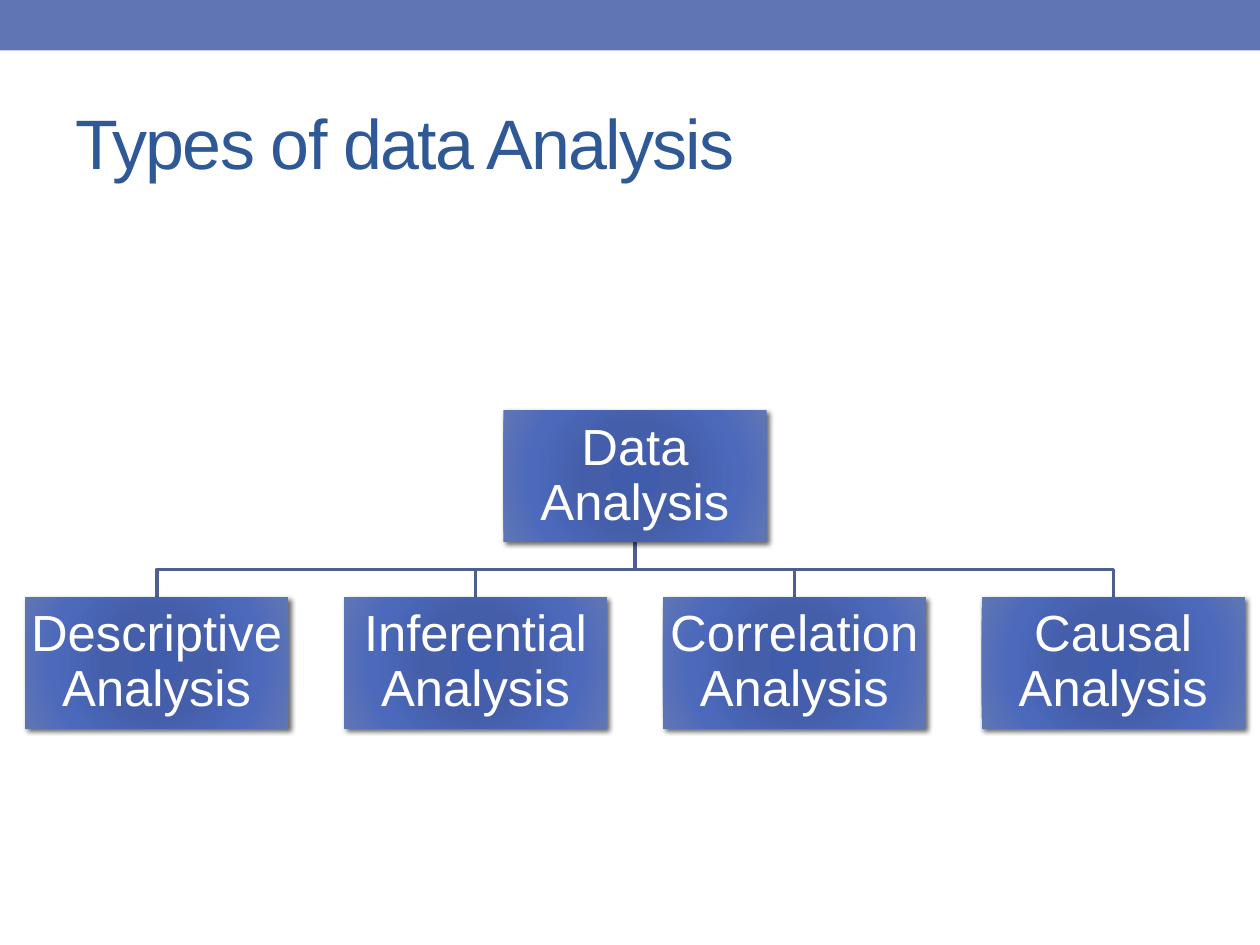
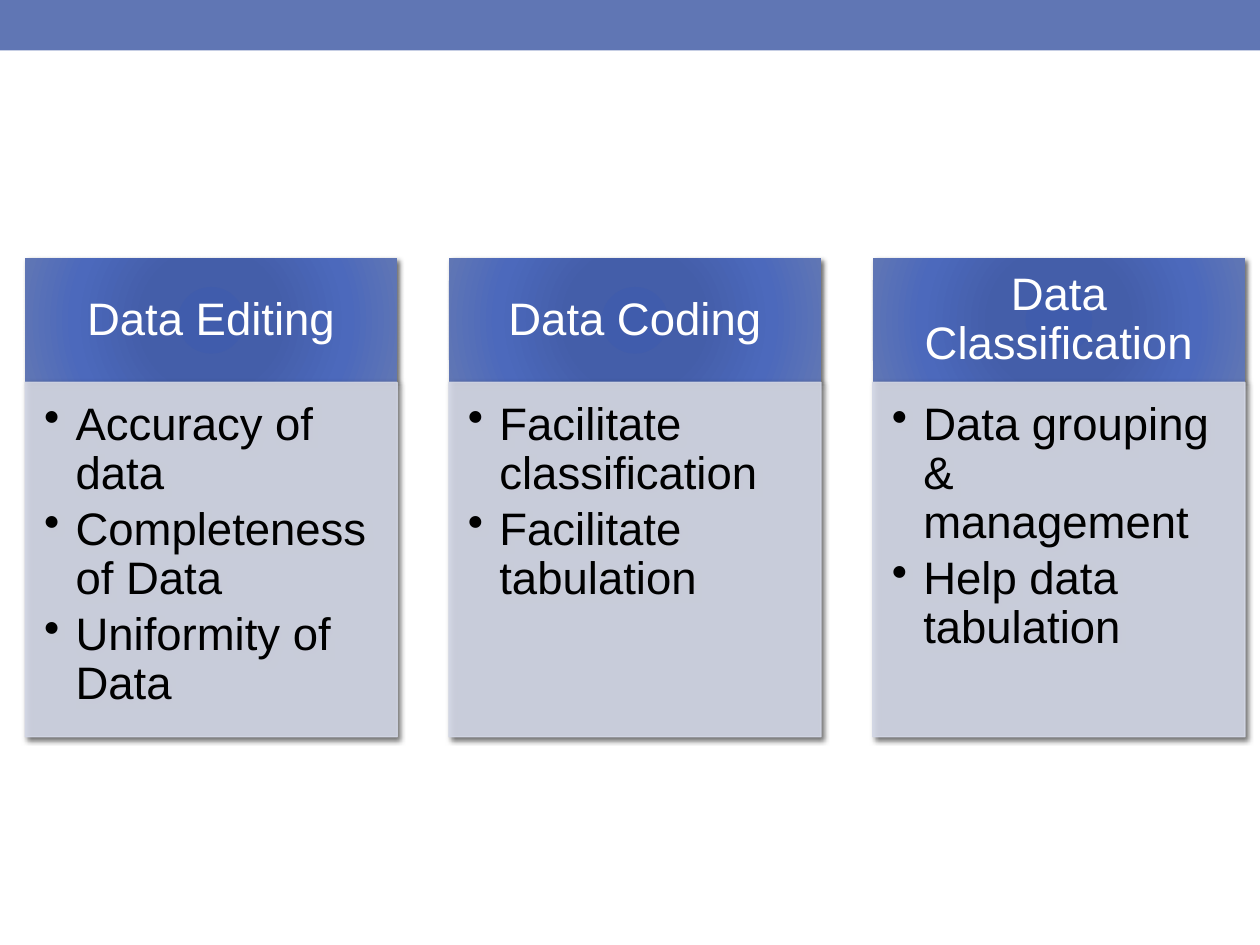
from dataclasses import dataclass

import pptx
import pptx.util
import pptx.dml.color
import pptx.enum.shapes
import pptx.enum.text
import pptx.oxml
import pptx.oxml.ns

Pt = pptx.util.Pt
ALIGN = pptx.enum.text.PP_ALIGN
ANCHOR = pptx.enum.text.MSO_ANCHOR
NS = 'xmlns:a="http://schemas.openxmlformats.org/drawingml/2006/main"'


@dataclass(frozen=True)
class Theme:
    font: str = "Arial"
    band: str = "6076B4"
    title: str = "2F5897"
    link: str = "4D5E90"
    pale: str = "D2D6E5"
    white: str = "FFFFFF"
    black: str = "000000"
    glow: tuple = ((0, "405CAC"), (34, "445EA9"), (70, "4C69BC"), (100, "6076B4"))
    title_size: int = 40
    node_size: int = 29
    card_size: int = 26


THEME = Theme()
WIDTH, HEIGHT = 720, 540
LEFT, SPAN = 14.4, 697

ROOT = "Data Analysis"
KINDS = ["Descriptive Analysis", "Inferential Analysis",
         "Correlation Analysis", "Causal Analysis"]
NODE_W, NODE_H = 150.4, 75.2
ROOT_TOP, KIND_TOP = 234.5, 341.2

STEPS = {
    "Data Editing": ["Accuracy of data", "Completeness of Data", "Uniformity of Data"],
    "Data Coding": ["Facilitate classification", "Facilitate tabulation"],
    "Data Classification": ["Data grouping & management", "Help data tabulation"],
}
CARD_W, HEAD_H, BODY_H = 212.6, 70.9, 202.6
HEAD_TOP = 147.6


def rgb(code):
    return pptx.dml.color.RGBColor.from_string(code)


def xml(text):
    """Parse one drawing element that uses the a: prefix."""
    return pptx.oxml.parse_xml(f"<a:wrap {NS}>{text}</a:wrap>")[0]


def spread(count, width):
    """Left edges of equal items that fill the span with equal gaps."""
    step = (SPAN - width) / (count - 1)
    return [LEFT + i * step for i in range(count)]


def add_rect(slide, x, y, w, h, color):
    kind = pptx.enum.shapes.MSO_SHAPE.RECTANGLE
    rect = slide.shapes.add_shape(kind, Pt(x), Pt(y), Pt(w), Pt(h))
    rect.shadow.inherit = False
    rect.fill.solid()
    rect.fill.fore_color.rgb = rgb(color)
    rect.line.fill.background()
    return rect


def add_shade(shape):
    effects = shape._element.spPr.find(pptx.oxml.ns.qn("a:effectLst"))
    effects.append(xml(
        f'<a:outerShdw blurRad="{Pt(3)}" dist="{Pt(2)}" dir="2700000" rotWithShape="0">'
        f'<a:srgbClr val="{THEME.black}"><a:alpha val="60000"/></a:srgbClr></a:outerShdw>'))


def add_glow(shape):
    """Swap the solid fill for the circular gradient."""
    stops = "".join(f'<a:gs pos="{pos * 1000}"><a:srgbClr val="{code}"/></a:gs>'
                    for pos, code in THEME.glow)
    grad = xml(f'<a:gradFill rotWithShape="1"><a:gsLst>{stops}</a:gsLst><a:path path="circle">'
               '<a:fillToRect l="100000" t="100000" r="100000" b="100000"/></a:path></a:gradFill>')
    props = shape._element.spPr
    props.replace(props.find(pptx.oxml.ns.qn("a:solidFill")), grad)


def fade(props):
    """Make the colours inside an element 90 percent opaque."""
    for color in props.iter(pptx.oxml.ns.qn("a:srgbClr")):
        color.append(xml('<a:alpha val="90000"/>'))


def add_text(shape, lines, size, color, align=ALIGN.CENTER, anchor=ANCHOR.MIDDLE,
             pads=(1.5, 1.5, 1.5, 1.5), bullet=False, leading=0.9):
    frame = shape.text_frame
    frame.word_wrap = True
    frame.vertical_anchor = anchor
    frame.margin_left, frame.margin_top, frame.margin_right, frame.margin_bottom = map(Pt, pads)
    for i, line in enumerate(lines):
        para = frame.paragraphs[0] if i == 0 else frame.add_paragraph()
        para.text = line
        para.alignment = align
        para.line_spacing = leading
        if bullet:
            para.space_after = Pt(3.9)
            props = para._p.get_or_add_pPr()
            props.set("marL", str(Pt(18)))
            props.set("indent", str(-Pt(18)))
            props.append(xml('<a:buChar char="•"/>'))
        para.font.name = THEME.font
        para.font.size = Pt(size)
        para.font.color.rgb = rgb(color)
    return frame


def add_title(slide, text):
    box = slide.shapes.add_textbox(Pt(36), Pt(42), Pt(648), Pt(78))
    frame = add_text(box, [text], THEME.title_size, THEME.title, ALIGN.LEFT,
                     pads=(7.2, 3.6, 7.2, 3.6), leading=1.0)
    for font in frame._txBody.iter(pptx.oxml.ns.qn("a:defRPr")):
        font.set("spc", "-100")


def add_panel(slide, text, x, y, w, h, size, pads):
    """A gradient rectangle with centred white text."""
    panel = add_rect(slide, x, y, w, h, THEME.band)
    add_glow(panel)
    add_shade(panel)
    add_text(panel, [text], size, THEME.white, pads=pads)


def add_node(slide, text, x, y):
    add_panel(slide, text, x, y, NODE_W, NODE_H, THEME.node_size, (1.5, 1.5, 1.5, 1.5))


def add_branch(slide, start, end):
    """A stepped line that turns halfway down."""
    (x1, y1), (x2, y2) = start, end
    mid = (y1 + y2) / 2
    route = slide.shapes.build_freeform(Pt(x1), Pt(y1))
    turns = [(x1, mid), (x2, mid), (x2, y2)]
    route.add_line_segments([(Pt(x), Pt(y)) for x, y in turns], close=False)
    branch = route.convert_to_shape()
    branch.shadow.inherit = False
    branch.fill.background()
    branch.line.color.rgb = rgb(THEME.link)
    branch.line.width = Pt(2.08)


def add_card(slide, head, points, x):
    add_panel(slide, head, x, HEAD_TOP, CARD_W, HEAD_H, THEME.card_size, (14.4, 8.6, 14.4, 8.6))
    body = add_rect(slide, x, HEAD_TOP + HEAD_H, CARD_W, BODY_H, THEME.pale)
    body.line.color.rgb = rgb(THEME.pale)
    body.line.width = Pt(0.75)
    fade(body._element.spPr)
    add_shade(body)
    add_text(body, points, THEME.card_size, THEME.black, ALIGN.LEFT, ANCHOR.TOP,
             (10.8, 10.8, 14.4, 16.6), bullet=True)


def add_slide(deck):
    slide = deck.slides.add_slide(deck.slide_layouts[6])
    add_rect(slide, 0, 0, WIDTH, 28.8, THEME.band)
    return slide


def add_tree(slide):
    lefts = spread(len(KINDS), NODE_W)
    root = (lefts[0] + lefts[-1]) / 2
    half = NODE_W / 2
    for x in reversed(lefts):
        add_branch(slide, (root + half, ROOT_TOP + NODE_H), (x + half, KIND_TOP))
    add_node(slide, ROOT, root, ROOT_TOP)
    for kind, x in zip(KINDS, lefts):
        add_node(slide, kind, x, KIND_TOP)


def main():
    deck = pptx.Presentation()
    deck.slide_width, deck.slide_height = Pt(WIDTH), Pt(HEIGHT)

    types = add_slide(deck)
    add_title(types, "Types of data Analysis")
    add_tree(types)

    steps = add_slide(deck)
    for (head, points), x in zip(STEPS.items(), spread(len(STEPS), CARD_W)):
        add_card(steps, head, points, x)

    deck.save("out.pptx")


if __name__ == "__main__":
    main()
